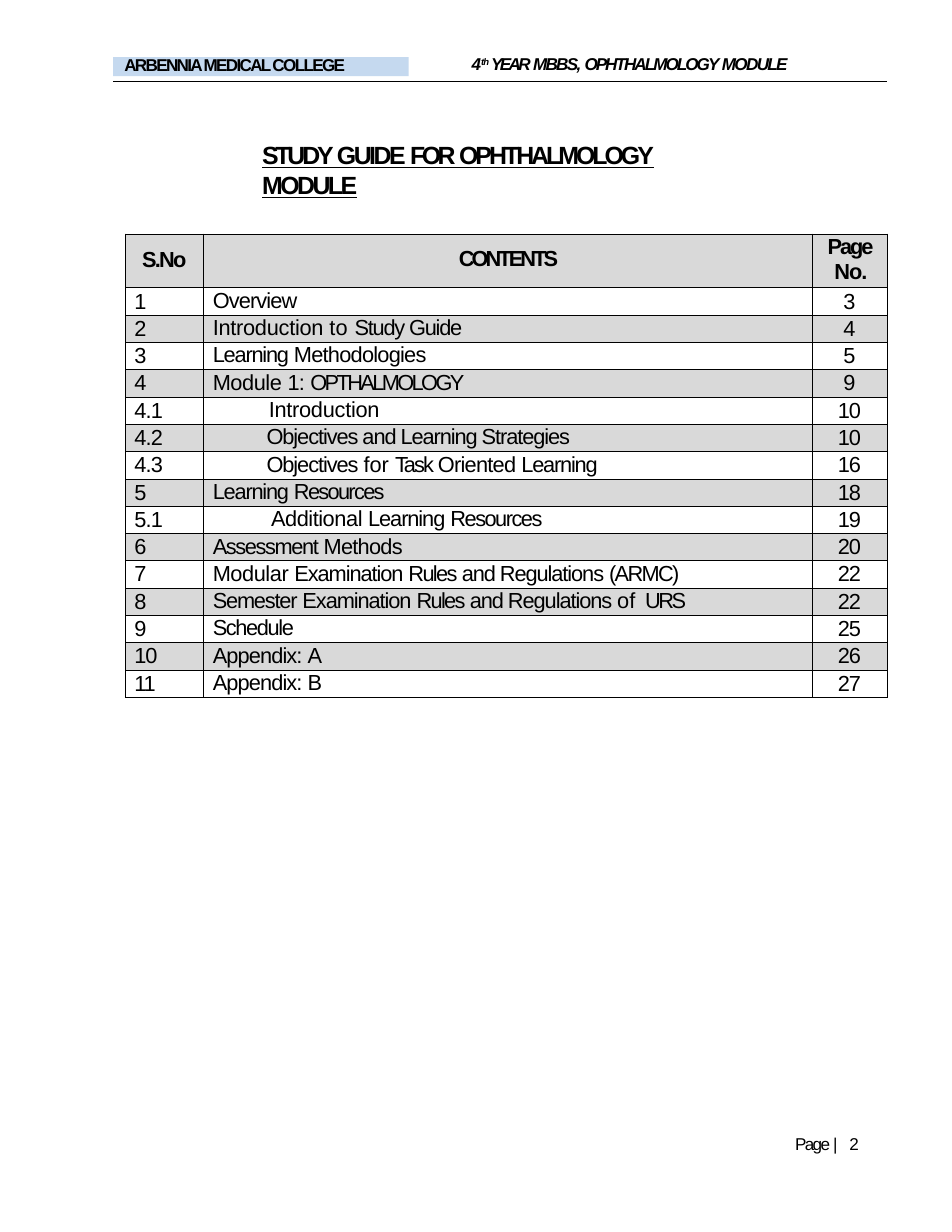
from dataclasses import dataclass
from lxml import etree
from pptx import Presentation, util as u
from pptx.dml.color import RGBColor
from pptx.enum import shapes, text
from pptx.oxml.ns import qn


@dataclass
class Theme:
    font: str = "Arial"
    ink: str = "000000"
    band: str = "D9D9D9"
    tag: str = "C5D9EF"
    small: float = 11
    body: float = 14
    head: float = 16


LEFT, MID = text.PP_ALIGN.LEFT, text.PP_ALIGN.CENTER


class Page:
    def __init__(self, slide, theme):
        self.slide, self.theme = slide, theme

    def frame(self, tf, top=0):
        tf.word_wrap = True
        tf.auto_size = text.MSO_AUTO_SIZE.NONE
        tf.vertical_anchor = text.MSO_ANCHOR.TOP
        tf.margin_left = tf.margin_right = tf.margin_bottom = 0
        tf.margin_top = u.Inches(top)

    def typeset(self, para, runs, size, bold=False, italic=False, line=False,
                align=LEFT, indent=0, before=0, pitch=None):
        """Fill a paragraph with (wording, letter spacing in points) runs."""
        para.alignment = align
        para.space_before = u.Pt(before)
        if pitch:
            para.line_spacing = u.Pt(pitch)
        para._p.get_or_add_pPr().set("marL", str(u.Inches(indent)))
        for words, gap in runs:
            run = para.add_run()
            run.text = words
            font = run.font
            font.name, font.size = self.theme.font, u.Pt(size)
            font.bold, font.italic, font.underline = bold, italic, line
            font.color.rgb = RGBColor.from_string(self.theme.ink)
            run._r.get_or_add_rPr().set("spc", str(round(gap * 100)))

    def title(self, box, runs, **look):
        shape = self.slide.shapes.title
        shape.left, shape.top, shape.width, shape.height = map(u.Inches, box)
        self.frame(shape.text_frame, 0.01)
        self.typeset(shape.text_frame.paragraphs[0], runs, self.theme.head, **look)

    def label(self, box, runs, **look):
        shape = self.slide.shapes.add_textbox(*map(u.Inches, box))
        self.frame(shape.text_frame)
        para = shape.text_frame.paragraphs[0]
        self.typeset(para, runs, self.theme.small, **look)
        return para

    def bar(self, box, runs, **look):
        shape = self.slide.shapes.add_shape(
            shapes.MSO_SHAPE.RECTANGLE, *map(u.Inches, box))
        shape.shadow.inherit = False
        shape.fill.solid()
        shape.fill.fore_color.rgb = RGBColor.from_string(self.theme.tag)
        shape.line.fill.background()
        self.frame(shape.text_frame)
        self.typeset(shape.text_frame.paragraphs[0], runs, self.theme.small, **look)

    def rule(self, x, y, end):
        line = self.slide.shapes.add_connector(
            shapes.MSO_CONNECTOR.STRAIGHT, *map(u.Inches, (x, y, end, y)))
        line.line.width = u.Pt(0.75)
        line.line.color.rgb = RGBColor.from_string(self.theme.ink)
        etree.SubElement(line._element.spPr, qn("a:effectLst"))

    def grid(self, box, cols, first, count):
        shape = self.slide.shapes.add_table(count, len(cols), *map(u.Inches, box))
        table = shape.table
        table.first_row = table.horz_banding = False
        for col, width in zip(table.columns, cols):
            col.width = u.Inches(width)
        for i, row in enumerate(table.rows):
            row.height = u.Inches((box[3] - first) / (count - 1) if i else first)
            for cell in row.cells:
                self.style(cell, i % 2 == 0)
        return table

    def style(self, cell, shaded):
        cell.margin_left = cell.margin_right = 0
        cell.margin_top = cell.margin_bottom = 0
        if shaded:
            cell.fill.solid()
            cell.fill.fore_color.rgb = RGBColor.from_string(self.theme.band)
        else:
            cell.fill.background()
        props = cell._tc.get_or_add_tcPr()
        for i, side in enumerate("LRTB"):
            edge = etree.Element(qn(f"a:ln{side}"), w=str(u.Pt(0.5)))
            fill = etree.SubElement(edge, qn("a:solidFill"))
            etree.SubElement(fill, qn("a:srgbClr"), val=self.theme.ink)
            props.insert(i, edge)

    def cell(self, cell, runs, **look):
        self.typeset(cell.text_frame.paragraphs[0], runs, self.theme.body, **look)


# Number, indent, wording with letter spacing, page
ROWS = [
    ("1", 0.08, [("Overview", -0.6)], "3"),
    ("2", 0.08, [("Introduction ", -0.2), ("to ", 0.2), ("Study Guide", -0.8)], "4"),
    ("3", 0.08, [("Learning ", -0.8), ("Methodologies", -0.5)], "5"),
    ("4", 0.08, [("Module ", -0.3), ("1: ", -0.5), ("OPTHALMOLOGY", -1.7)], "9"),
    ("4.1", 0.58, [("Introduction", -0.2)], "10"),
    ("4.2", 0.56, [("Objectives and Learning Strategies", -0.7)], "10"),
    ("4.3", 0.56, [("Objectives ", -0.7), ("for ", 0), ("Task ", -1.3),
                   ("Oriented ", -0.5), ("Learning", -0.8)], "16"),
    ("5", 0.08, [("Learning ", -0.8), ("Resources", -1.1)], "18"),
    ("5.1", 0.6, [("Additional ", -0.3), ("Learning ", -0.7), ("Resources", -1)], "19"),
    ("6", 0.08, [("Assessment ", -0.9), ("Methods", -0.5)], "20"),
    ("7", 0.08, [("Modular ", -0.3), ("Examination ", -0.7), ("Rules ", -1.1),
                 ("and Regulations ", -0.7), ("(ARMC)", -1.1)], "22"),
    ("8", 0.08, [("Semester ", -0.8), ("Examination ", -0.7), ("Rules ", -1.1),
                 ("and Regulations ", -0.7), ("of ", 0), (" URS", -1.6)], "22"),
    ("9", 0.08, [("Schedule", -0.9)], "25"),
    ("10", 0.08, [("Appendix: ", -0.6), ("A", -1.2)], "26"),
    ("11", 0.08, [("Appendix: ", -0.6), ("B", -1.8)], "27"),
]


def digits(number):
    gap = 0 if len(number) == 1 else -0.6 if "." in number else -0.8
    return [(number, gap)]


def main():
    deck = Presentation()
    deck.slide_width, deck.slide_height = u.Inches(8.5), u.Inches(11)
    page = Page(deck.slides.add_slide(deck.slide_layouts[5]), Theme())

    # Running header and footer
    page.rule(1.01, 0.73, 7.92)
    course = page.label(
        (4.2, 0.48, 3.65, 0.2),
        [("4", -0.3), ("th ", -0.5), ("YEAR ", -1.7), ("MBBS, ", -1.1),
         ("OPHTHALMOLOGY ", -1.3), ("MODULE", -1.1)],
        bold=True, italic=True, indent=0.01, before=1)
    raised = course.runs[1]
    raised.font.size = u.Pt(10.5)
    raised._r.get_or_add_rPr().set("baseline", "32000")
    page.label((7.09, 10.14, 0.64, 0.18),
               [("Page ", -1.1), ("| ", 2.2), ("2", -0.6)], indent=0.01, pitch=11.5)
    page.bar((1.01, 0.51, 2.64, 0.17), [("ARBENNIA MEDICAL COLLEGE", -1.1)],
             bold=True, indent=0.1, pitch=11.6)

    # Title
    page.title((2.33, 1.24, 4.39, 0.29),
               [("STUDY ", -2), ("GUIDE ", -1.6), ("FOR ", -2.2),
                ("OPHTHALMOLOGY", -1.9), (" ", -2), ("MODULE", -1.6)],
               bold=True, line=True, indent=0.01, before=0.9)

    # Contents table: header row
    table = page.grid((1.12, 2.09, 6.8, 4.14), (0.7, 5.43, 0.67), 0.48, len(ROWS) + 1)
    number, name, leaf = table.rows[0].cells
    number.margin_top, name.margin_top = u.Inches(0.12), u.Inches(0.11)
    page.cell(number, [("S.No", -1.2)], bold=True, indent=0.15)
    page.cell(name, [("CONTENTS", -1.9)], bold=True, align=MID, indent=0.01)
    page.cell(leaf, [("Page", -1.4)], bold=True, indent=0.14, pitch=16.2)
    page.typeset(leaf.text_frame.add_paragraph(), [("No.", -0.7)], page.theme.body,
                 bold=True, indent=0.2, before=0.3)

    # Contents table: entries
    for i, (no, indent, runs, sheet) in enumerate(ROWS, 1):
        number, name, leaf = table.rows[i].cells
        page.cell(number, digits(no), indent=0.08, pitch=16.6)
        page.cell(name, runs, indent=indent, pitch=16.2)
        page.cell(leaf, digits(sheet), align=MID, pitch=16.6)

    deck.save("out.pptx")


if __name__ == "__main__":
    main()
